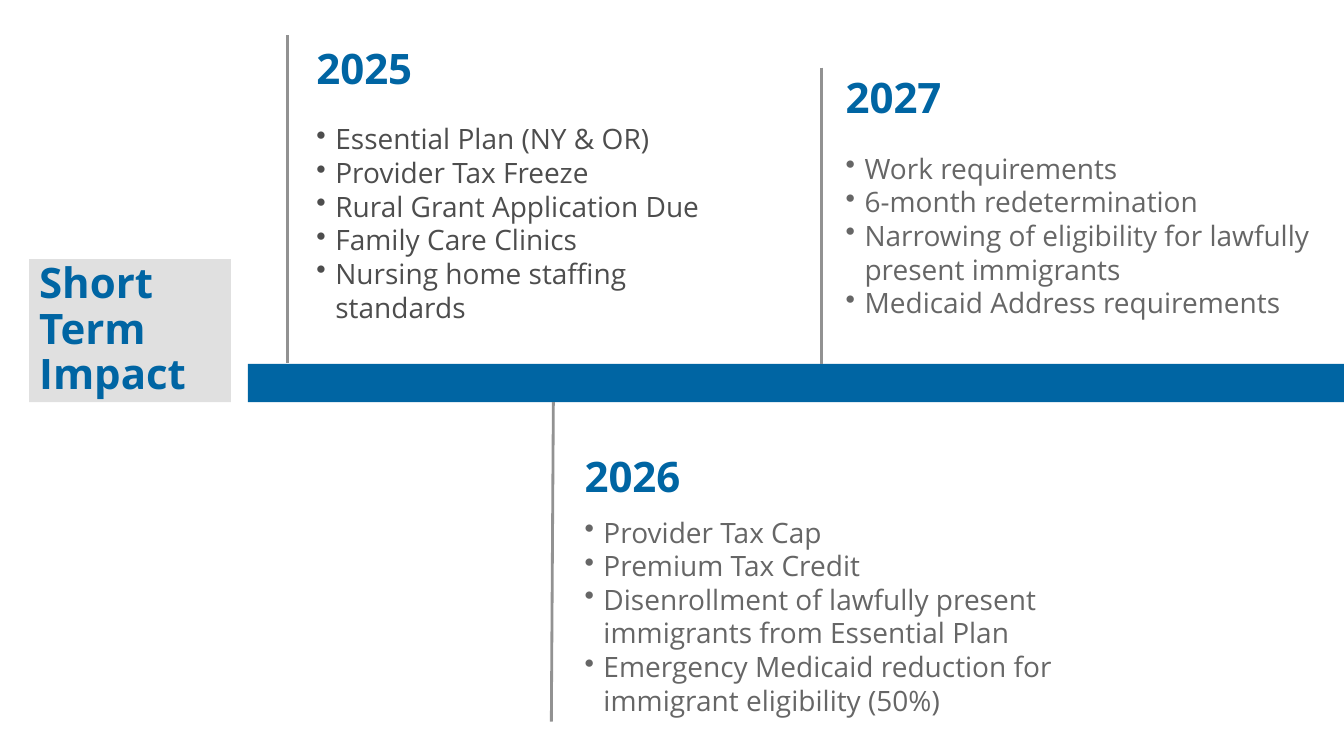
from lxml import etree
from pptx import Presentation
from pptx.dml.color import RGBColor
from pptx.enum.shapes import MSO_CONNECTOR, MSO_SHAPE
from pptx.enum.text import MSO_ANCHOR, MSO_AUTO_SIZE, PP_ALIGN
from pptx.oxml.ns import qn
from pptx.util import Pt

RECT, LINE = MSO_SHAPE.RECTANGLE, MSO_CONNECTOR.STRAIGHT
TOP, MID, LOW = MSO_ANCHOR.TOP, MSO_ANCHOR.MIDDLE, MSO_ANCHOR.BOTTOM
GROW, LEFT = MSO_AUTO_SIZE.SHAPE_TO_FIT_TEXT, PP_ALIGN.LEFT

COLORS = {"blue": "0065A3", "stem": "929292", "dark": "4D4D4D",
          "gray": "666666", "pale": "E0E0E0"}
FONT = "Open Sans"
PAD = 2.16
INDENT = 13.5
BAR = (177.12, 259.92, 782.88, 27.36)
BAR_END = BAR[1] + BAR[3]

EVENTS = [
    dict(year="2025", box=(223.92, 34.56, 284.4, 223.92), drop=50.4,
         stem=(205.2, 25.2, 205.2, 259.2), color="dark",
         items=["Essential Plan (NY & OR)", "Provider Tax Freeze",
                "Rural Grant Application Due", "Family Care Clinics",
                "Nursing home staffing standards"]),
    dict(year="2026", box=(415.44, 326.16, 342.72, 189.36), drop=39.6,
         stem=(395.28, BAR_END, 393.84, 515.52), color="gray",
         items=["Provider Tax Cap", "Premium Tax Credit",
                "Disenrollment of lawfully present immigrants from Essential Plan",
                "Emergency Medicaid reduction for immigrant eligibility (50%)"]),
    dict(year="2027", box=(601.92, 55.44, 398.16, 175.68), drop=50.4,
         stem=(586.8, 48.24, 586.8, BAR[1]), color="gray",
         items=["Work requirements", "6-month redetermination",
                "Narrowing of eligibility for lawfully present immigrants",
                "Medicaid Address requirements"]),
]


def rgb(name):
    """Look up a named colour."""
    return RGBColor.from_string(COLORS[name])


def place(box):
    """Turn a box in points into lengths."""
    return [Pt(v) for v in box]


def block(slide, box, color):
    """Draw a plain filled rectangle."""
    shape = slide.shapes.add_shape(RECT, *place(box))
    shape.shadow.inherit = False
    shape.fill.solid()
    shape.fill.fore_color.rgb = rgb(color)
    shape.line.fill.background()
    return shape


def write(shape, lines, size=20, color="gray", bold=False, anchor=TOP,
          space=None, bullet=False, left=PAD):
    """Fill a shape with formatted paragraphs."""
    frame = shape.text_frame
    frame.word_wrap = True
    frame.auto_size = GROW
    frame.vertical_anchor = anchor
    frame.margin_left = Pt(left)
    frame.margin_top = frame.margin_right = frame.margin_bottom = Pt(PAD)
    for i, line in enumerate(lines):
        para = frame.add_paragraph() if i else frame.paragraphs[0]
        para.alignment = LEFT
        if space:
            para.line_spacing = space
        if bullet:
            props = para._p.get_or_add_pPr()
            props.set("marL", str(Pt(INDENT)))
            props.set("indent", str(-Pt(INDENT)))
            etree.SubElement(props, qn("a:buChar")).set("char", "•")
        run = para.add_run()
        run.text = line
        run.font.name = FONT
        run.font.size = Pt(size)
        run.font.bold = bold
        run.font.color.rgb = rgb(color)


def stem(slide, ends):
    """Draw the line that ties an event to the bar."""
    line = slide.shapes.add_connector(LINE, *place(ends))
    line.line.color.rgb = rgb("stem")
    line.line.width = Pt(2)
    etree.SubElement(line._element.spPr, qn("a:effectLst"))


def event(slide, year, box, drop, ends, color, items):
    """Place a year and its bullet list in a box."""
    x, y, w, h = box
    stem(slide, ends)
    points = slide.shapes.add_textbox(*place((x, y + drop, w, h - drop)))
    write(points, items, color=color, bullet=True)
    head = slide.shapes.add_textbox(*place((x, y, 100, 33.84)))
    write(head, [year], size=30, color="blue", bold=True, anchor=LOW, space=0.8)


def label(slide, box):
    """Place the title block beside the bar."""
    write(block(slide, box, "pale"), ["Short", "Term", "Impact"], size=30,
          color="blue", bold=True, anchor=MID, space=0.9, left=7.2)


def main():
    """Build and save the timeline slide."""
    deck = Presentation()
    deck.slide_width, deck.slide_height = Pt(960), Pt(540)
    slide = deck.slides.add_slide(deck.slide_layouts[6])
    block(slide, BAR, "blue")
    for e in EVENTS:
        event(slide, e["year"], e["box"], e["drop"], e["stem"], e["color"],
              e["items"])
    label(slide, (20.88, 185.04, 144, 102.24))
    deck.save("out.pptx")


if __name__ == "__main__":
    main()
